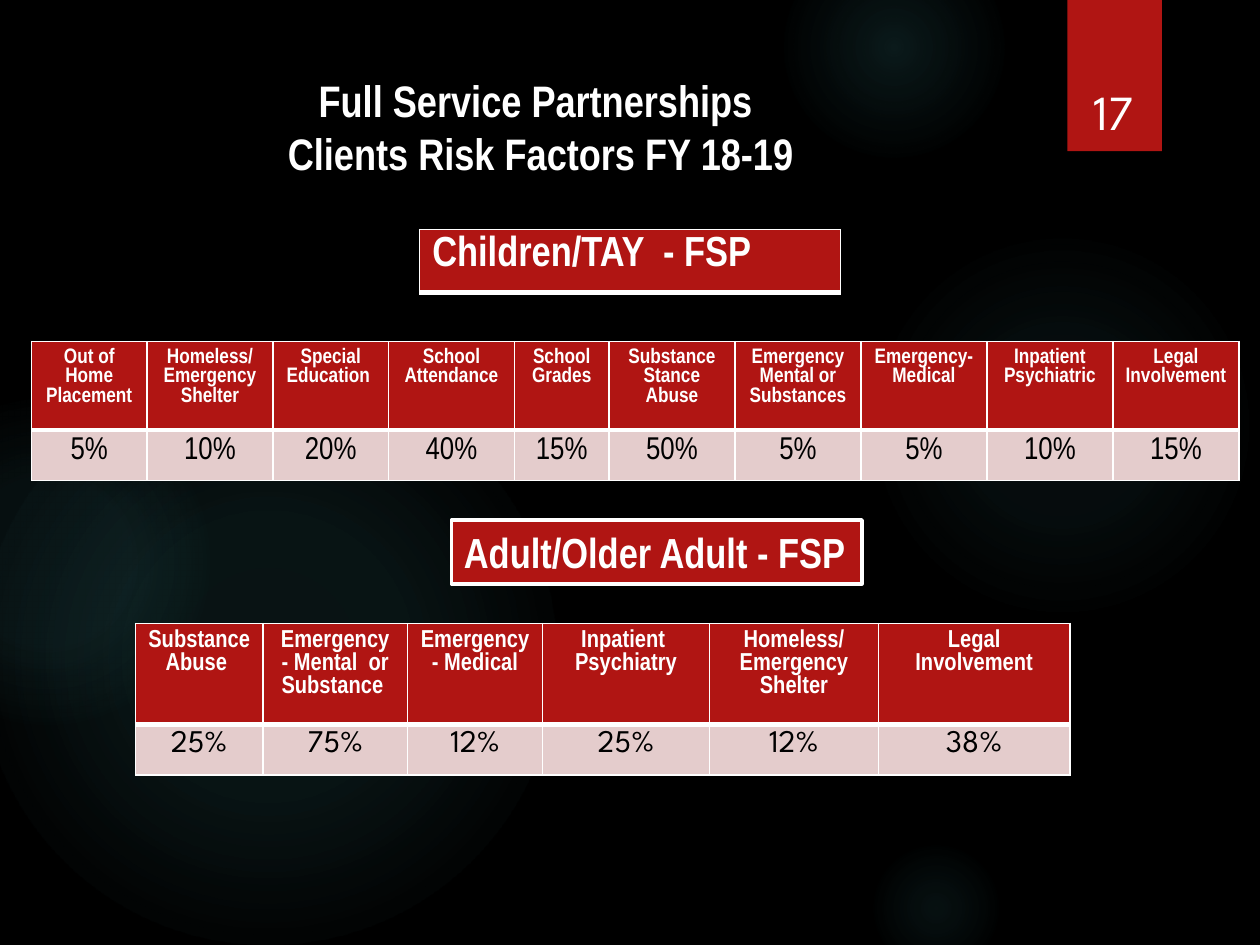
from pptx import Presentation
from pptx.dml.color import RGBColor
from pptx.enum import shapes, text
from pptx.oxml import parse_xml
from pptx.oxml.ns import nsdecls
from pptx.util import Pt

COLORS = {"black": "000000", "white": "FFFFFF", "red": "B01513",
          "pink": "E4CCCC", "glow": "50B9C1"}
NARROW, SPARTAN = "Arial Narrow", "League Spartan"

GLOWS = [
    (496, 132, 222, (7, 6), (36, 69)),
    (448, -36, 126, (14, 7), (36, 73)),
    (496, 480, 78, (9, 5), (36, 66)),
    (-12, 210, 330, (11, 10), (36, 75)),
    (-66, 228, 186, (8, 8), (36, 72)),
]
CHILD_RISKS = [
    ("Out of Home Placement", "5%", 66),
    ("Homeless/\nEmergency Shelter", "10%", 72),
    ("Special Education ", "20%", 66),
    ("School Attendance", "40%", 72),
    ("School Grades", "15%", 54),
    ("Substance Stance Abuse", "50%", 72),
    ("Emergency Mental or Substances", "5%", 72),
    ("Emergency-Medical", "5%", 72),
    ("Inpatient Psychiatric", "10%", 72),
    ("Legal Involvement", "15%", 72),
]
ADULT_RISKS = [
    ("Substance Abuse ", "25%", 72.7),
    ("Emergency - Mental  or Substance ", "75%", 82.8),
    ("Emergency - Medical", "12%", 77),
    ("Inpatient  Psychiatry", "25%", 95.5),
    ("Homeless/ Emergency Shelter", "12%", 96.5),
    ("Legal Involvement", "38%", 109.5),
]


def rgb(name):
    return RGBColor.from_string(COLORS[name])


def write(frame, words, size, font=NARROW, color="white", bold=True,
          align=text.PP_ALIGN.CENTER):
    frame.text = words
    for paragraph in frame.paragraphs:
        paragraph.alignment = align
        paragraph.font.size = Pt(size)
        paragraph.font.name = font
        paragraph.font.bold = bold
        paragraph.font.color.rgb = rgb(color)


def add_block(slide, kind, left, top, width, height, fill="red"):
    block = slide.shapes.add_shape(kind, Pt(left), Pt(top), Pt(width), Pt(height))
    block.shadow.inherit = False
    block.fill.solid()
    block.fill.fore_color.rgb = rgb(fill)
    block.line.fill.background()
    return block


def add_glow(slide, left, top, size, opacities, stops):
    glow = add_block(slide, shapes.MSO_SHAPE.OVAL, left, top, size, size, "glow")
    levels = zip((0, *stops), (*opacities, 0))
    stops_xml = "".join(
        f'<a:gs pos="{stop * 1000}"><a:srgbClr val="{COLORS["glow"]}">'
        f'<a:alpha val="{opacity * 1000}"/></a:srgbClr></a:gs>'
        for stop, opacity in levels)
    gradient = parse_xml(
        f'<a:gradFill {nsdecls("a")}><a:gsLst>{stops_xml}</a:gsLst>'
        '<a:path path="circle"><a:fillToRect l="50000" t="50000" r="50000" b="50000"/>'
        '</a:path></a:gradFill>')
    properties = glow.fill._xPr
    properties.replace(properties.solidFill, gradient)


def format_cell(cell, fill, top_line, bottom_line):
    cell.fill.solid()
    cell.fill.fore_color.rgb = rgb(fill)
    properties = cell._tc.get_or_add_tcPr()
    for index, (side, width) in enumerate(
            [("L", 1), ("R", 1), ("T", top_line), ("B", bottom_line)]):
        properties.insert(index, parse_xml(
            f'<a:ln{side} {nsdecls("a")} w="{Pt(width)}"><a:solidFill>'
            f'<a:srgbClr val="{COLORS["white"]}"/></a:solidFill></a:ln{side}>'))


def add_grid(slide, left, top, widths, heights):
    grid = slide.shapes.add_table(len(heights), len(widths), Pt(left), Pt(top),
                                  Pt(sum(widths)), Pt(sum(heights))).table
    for column, width in zip(grid.columns, widths):
        column.width = Pt(width)
    for row, height in zip(grid.rows, heights):
        row.height = Pt(height)
    return grid


def add_risk_table(slide, left, top, risks, header_height, header_size, value_font):
    grid = add_grid(slide, left, top, [risk[2] for risk in risks],
                    [header_height, 29])
    for column, (factor, share, _) in enumerate(risks):
        header, value = grid.cell(0, column), grid.cell(1, column)
        write(header.text_frame, factor, header_size)
        format_cell(header, "red", 1, 3)
        write(value.text_frame, share, 18, value_font, "black", False)
        format_cell(value, "pink", 3, 1)


def add_title(slide):
    title = slide.shapes.title
    title.left, title.top, title.width, title.height = Pt(30), Pt(38.5), Pt(558), Pt(53)
    frame = title.text_frame
    frame.auto_size = text.MSO_AUTO_SIZE.NONE
    frame.vertical_anchor = text.MSO_ANCHOR.TOP
    write(frame, "Full Service Partnerships \vClients Risk Factors FY 18-19", 25.2)


def add_page_number(slide):
    add_block(slide, shapes.MSO_SHAPE.RECTANGLE, 610, 0, 54, 86.4)
    number = slide.shapes.add_textbox(Pt(611.5), Pt(23), Pt(49.5), Pt(60.5))
    number.text_frame.word_wrap = True
    number.text_frame.vertical_anchor = text.MSO_ANCHOR.BOTTOM
    write(number.text_frame, "17", 28, SPARTAN, bold=False)


def add_children_heading(slide):
    heading = add_grid(slide, 239.8, 131.2, [240.5], [29.5]).cell(0, 0)
    write(heading.text_frame, "Children/TAY  - FSP", 24, align=text.PP_ALIGN.LEFT)
    format_cell(heading, "red", 1, 3)


def add_adult_heading(slide):
    heading = add_block(slide, shapes.MSO_SHAPE.RECTANGLE, 258, 297.2, 234.5, 36.4)
    heading.line.color.rgb = rgb("white")
    heading.line.width = Pt(2.25)
    heading.text_frame.word_wrap = False
    write(heading.text_frame, "Adult/Older Adult - FSP", 24, align=text.PP_ALIGN.LEFT)


def main():
    deck = Presentation()
    deck.slide_width, deck.slide_height = Pt(720), Pt(540)
    slide = deck.slides.add_slide(deck.slide_layouts[5])
    slide.background.fill.solid()
    slide.background.fill.fore_color.rgb = rgb("black")
    for glow in GLOWS:
        add_glow(slide, *glow)
    add_title(slide)
    add_page_number(slide)
    add_risk_table(slide, 18, 195.2, CHILD_RISKS, 40.8, 12, NARROW)
    add_risk_table(slide, 77.5, 356.3, ADULT_RISKS, 46.5, 14, SPARTAN)
    add_children_heading(slide)
    add_adult_heading(slide)
    deck.save("out.pptx")


if __name__ == "__main__":
    main()
